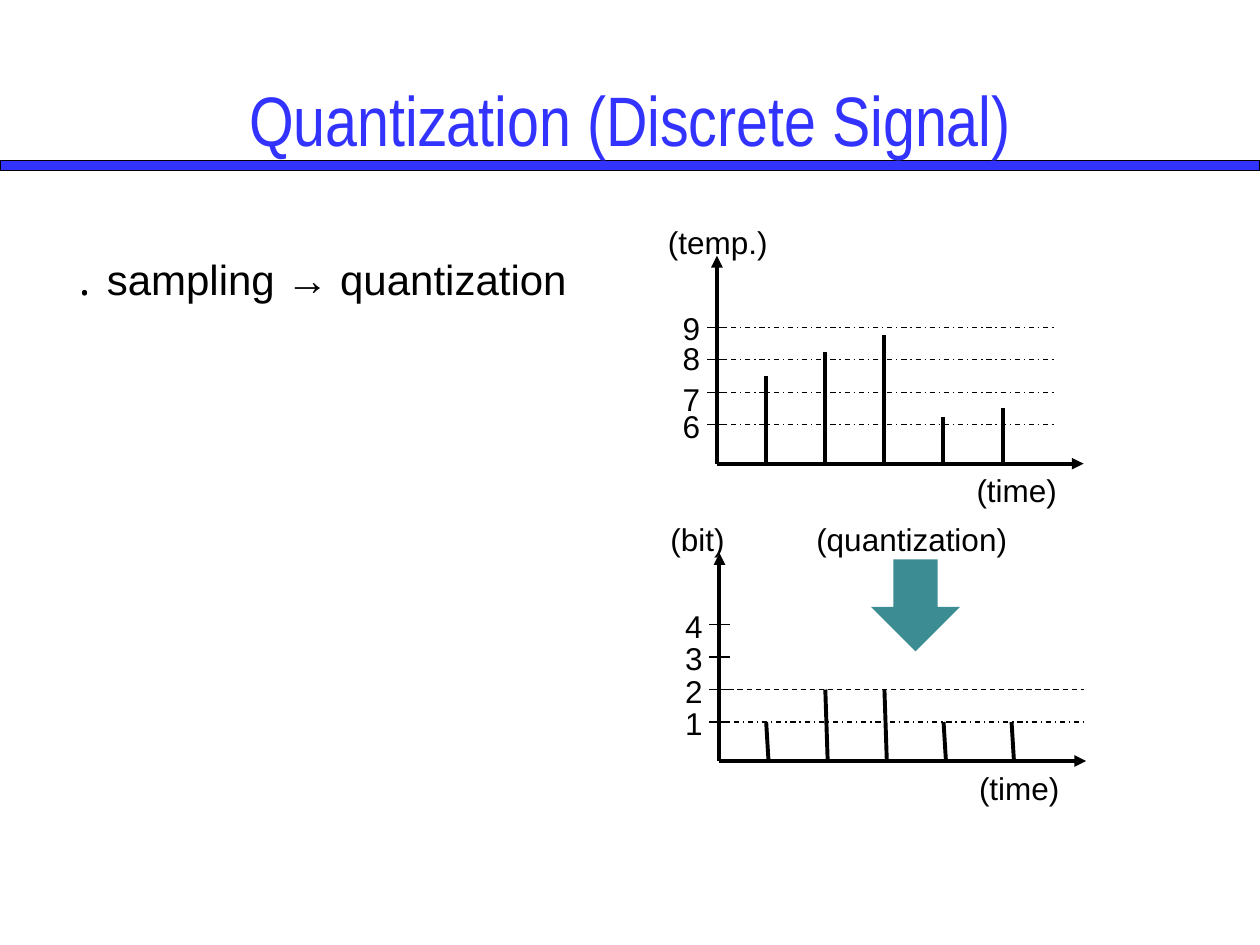
from dataclasses import dataclass

from lxml import etree
from pptx import Presentation
from pptx import util as u
from pptx.dml.color import RGBColor
from pptx.enum import dml, shapes, text
from pptx.oxml.ns import qn


@dataclass(frozen=True)
class Theme:
    """Colours, fonts, type sizes and line widths."""
    blue: str = "3333FF"
    teal: str = "3C8C93"
    ink: str = "000000"
    heading_font: str = "Arial Narrow"
    body_font: str = "Arial"
    heading_size: int = 40
    body_size: int = 24
    label_size: int = 18
    thick: float = 2.25
    thin: float = 0.75


@dataclass(frozen=True)
class Box:
    """A region in inches."""
    left: float
    top: float
    width: float
    height: float

    def share(self, left, top, width, height):
        """Return the region that takes the given shares of this one."""
        return Box(self.left + left * self.width, self.top + top * self.height,
                   width * self.width, height * self.height)

    def emu(self):
        """Return the four lengths for python-pptx."""
        return [u.Inches(n) for n in (self.left, self.top, self.width, self.height)]


@dataclass(frozen=True)
class Level:
    """A mark on the vertical axis, with its guide and label offset in rows."""
    label: str
    dash: object = None
    drop: float = 0.74


@dataclass(frozen=True)
class Signal:
    """The labels, levels and (column, value) stems of one diagram."""
    heading: str
    heading_width: float
    levels: list
    stems: list
    guide_end: float
    lean: float = 0


THEME = Theme()
PAGE = Box(0, 0, 10, 7.5)
COLUMNS, ROWS = 6.2, 6.4
LABEL_HEIGHT = 0.4
DASH, DASH_DOT = dml.MSO_LINE.DASH, dml.MSO_LINE.DASH_DOT


def add_text(slide, box, words, size, font=THEME.body_font, color=THEME.ink, centred=False):
    """Place one line of text, centred in its box or fitted to it."""
    shape = slide.shapes.add_textbox(*box.emu())
    frame = shape.text_frame
    frame.text = words
    frame.word_wrap = centred
    paragraph = frame.paragraphs[0]
    if centred:
        frame.vertical_anchor = text.MSO_ANCHOR.MIDDLE
        paragraph.alignment = text.PP_ALIGN.CENTER
    run_font = paragraph.runs[0].font
    run_font.name, run_font.size = font, u.Pt(size)
    run_font.color.rgb = RGBColor.from_string(color)


def add_shape(slide, kind, box, fill, outlined=False):
    """Place a flat filled shape."""
    shape = slide.shapes.add_shape(kind, *box.emu())
    shape.shadow.inherit = False
    shape.fill.solid()
    shape.fill.fore_color.rgb = RGBColor.from_string(fill)
    if outlined:
        shape.line.color.rgb = RGBColor.from_string(THEME.ink)
        shape.line.width = u.Pt(THEME.thin)
    else:
        shape.line.fill.background()


def add_line(slide, start, end, width, dash=None, arrow=False):
    """Draw a straight line between two points in inches."""
    ends = [u.Inches(n) for n in (*start, *end)]
    connector = slide.shapes.add_connector(shapes.MSO_CONNECTOR.STRAIGHT, *ends)
    connector.line.color.rgb = RGBColor.from_string(THEME.ink)
    connector.line.width = u.Pt(width)
    if dash:
        connector.line.dash_style = dash
    properties = connector._element.spPr
    if arrow:
        etree.SubElement(properties.find(qn("a:ln")), qn("a:tailEnd"), type="triangle")
    etree.SubElement(properties, qn("a:effectLst"))


def add_header(slide, box):
    """Place the title over a full-width bar."""
    add_shape(slide, shapes.MSO_SHAPE.RECTANGLE, box.share(0, 0.81, 1, 0.05), THEME.blue, True)
    add_text(slide, box.share(0.05, 0.19, 0.9, 0.81), "Quantization (Discrete Signal)",
             THEME.heading_size, THEME.heading_font, THEME.blue, True)


def add_signal(slide, box, signal):
    """Draw axes, levels and stems on a grid that starts at the origin."""
    def point(column, row):
        """Return the place of a grid point in inches."""
        return (box.left + column * box.width / COLUMNS,
                box.top + box.height - row * box.height / ROWS)

    def label(column, row, width, words):
        """Put a label with its top left corner on a grid point."""
        add_text(slide, Box(*point(column, row), width, LABEL_HEIGHT), words, THEME.label_size)

    first_column, first_row = 0.83, 1.2
    for end in (point(0, ROWS), point(COLUMNS, 0)):
        add_line(slide, point(0, 0), end, THEME.thick, arrow=True)
    for index, level in enumerate(signal.levels):
        row = first_row + index
        add_line(slide, point(-0.17, row), point(0.17, row), THEME.thin)
        label(-0.79, row + level.drop, 0.34, level.label)
        if level.dash:
            add_line(slide, point(0, row), point(signal.guide_end, row), THEME.thin, level.dash)
    lowest = int(signal.levels[0].label)
    for slot, value in signal.stems:
        column = first_column + slot
        add_line(slide, point(column, 0),
                 point(column - signal.lean, first_row + value - lowest), THEME.thick)
    label(-1.04, 7.6, signal.heading_width, signal.heading)
    label(4.18, -0.04, 0.84, "(time)")


def add_step(slide, box):
    """Place the step name above its arrow."""
    add_shape(slide, shapes.MSO_SHAPE.DOWN_ARROW, box.share(0.31, 0.33, 0.41, 0.67), THEME.teal)
    add_text(slide, box.share(0, 0, 1, 0.37), "(quantization)", THEME.label_size)


def main():
    """Build and save the slide."""
    presentation = Presentation()
    presentation.slide_width, presentation.slide_height = PAGE.emu()[2:]
    slide = presentation.slides.add_slide(presentation.slide_layouts[6])
    sampled = Signal(
        "(temp.)", 0.99,
        [Level("6", DASH_DOT), Level("7", DASH_DOT, 0.58),
         Level("8", DASH_DOT, 0.82), Level("9", DASH_DOT)],
        list(enumerate([7.5, 8.25, 8.75, 6.25, 6.5])), 5.71)
    quantized = Signal(
        "(bit)", 0.63,
        [Level("1", DASH_DOT), Level("2", DASH), Level("3"), Level("4")],
        [(0, 1), (1, 2), (2, 2), (3, 1), (4.15, 1)], 6.16, 0.04)
    add_header(slide, PAGE.share(0, 0, 1, 0.21))
    add_text(slide, Box(0.49, 1.96, 4.11, 0.5), "․ sampling → quantization", THEME.body_size)
    add_signal(slide, Box(5.69, 2.03, 2.91, 1.65), sampled)
    add_signal(slide, Box(5.71, 4.39, 2.91, 1.65), quantized)
    add_step(slide, Box(6.38, 4.08, 1.72, 1.09))
    presentation.save("out.pptx")


if __name__ == "__main__":
    main()
